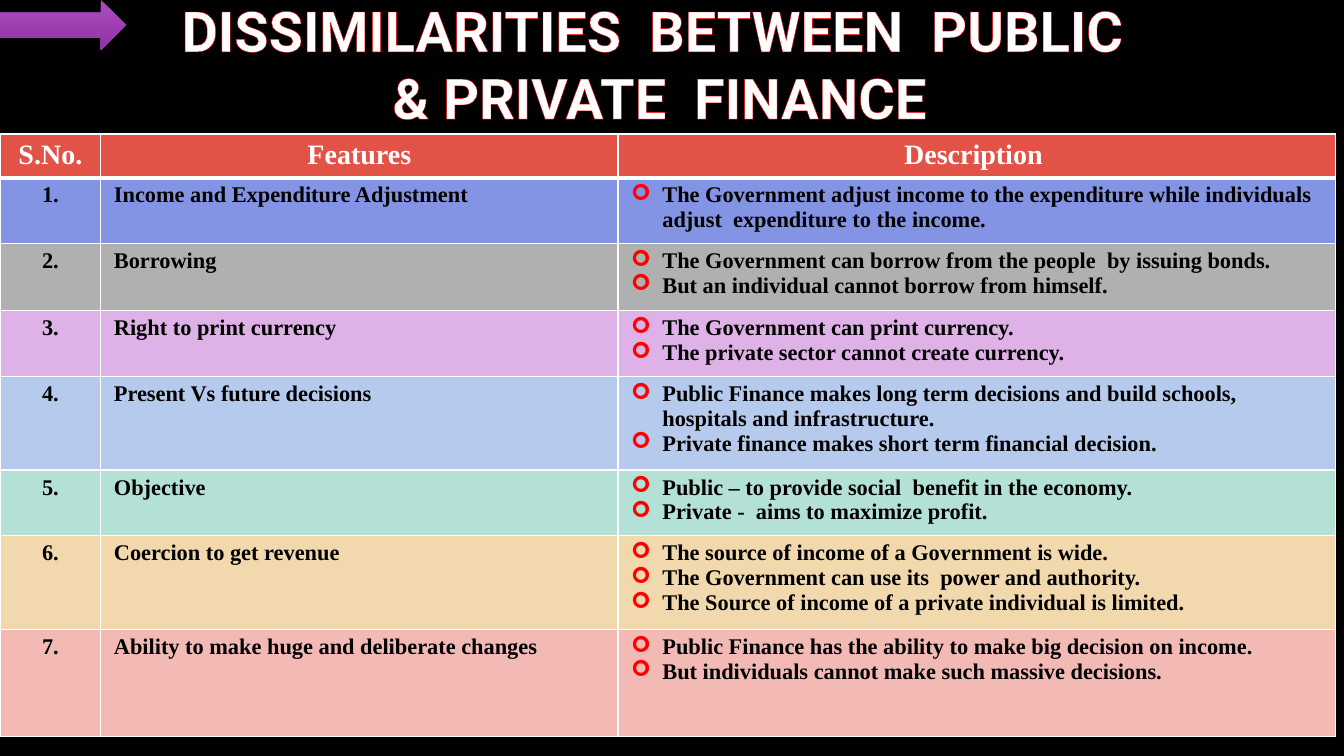
"""Build a slide with a table of differences between public and private finance."""
from pptx import Presentation, util as u
from pptx.dml.color import RGBColor
from pptx.enum import shapes, text
from pptx.oxml import parse_xml
from pptx.oxml.ns import nsdecls

WIDE, HIGH = u.Inches(13.33), u.Inches(7.5)
SERIF = "Times New Roman"
WHITE, BLACK, RED = "FFFFFF", "000000", "FF0000"
COLS = [1, 5.13, 7.12]
HEAD = ["S.No.", "Features", "Description "]
ROWS = [
    (0.65, "8394E4", "Income and Expenditure Adjustment", [
        "The Government adjust income to the expenditure while individuals "
        "adjust  expenditure to the income."]),
    (0.67, "B0B0B0", "Borrowing", [
        "The Government can borrow from the people  by issuing bonds.",
        "But an individual cannot borrow from himself."]),
    (0.65, "DEB2E6", "Right to print currency", [
        "The Government can print currency.",
        "The private sector cannot create currency."]),
    (0.93, "B5CAED", "Present Vs future decisions", [
        "Public Finance makes long term decisions and build schools, "
        "hospitals and infrastructure.",
        "Private finance makes short term financial decision."]),
    (0.65, "B4E1D6", "Objective", [
        "Public – to provide social  benefit in the economy.",
        "Private -  aims to maximize profit."]),
    (0.93, "F1D8AD", "Coercion to get revenue", [
        "The source of income of a Government is wide.",
        "The Government can use its  power and authority.",
        "The Source of income of a private individual is limited."]),
    (1.06, "F3BAB5", "Ability to make huge and deliberate changes", [
        "Public Finance has the ability to make big decision on income.",
        "But individuals cannot make such massive decisions."]),
]


def paint(color, code):
    """Set a colour from a hex string."""
    color.rgb = RGBColor.from_string(code)


def flood(fill, code):
    """Fill with one solid colour."""
    fill.solid()
    paint(fill.fore_color, code)


def node(tag, attrs="", body=""):
    """Make a drawing element."""
    return parse_xml(f"<a:{tag} {nsdecls('a')} {attrs}>{body}</a:{tag}>")


def solid(code, more=""):
    """Give the markup of a solid fill."""
    return f'<a:solidFill><a:srgbClr val="{code}"/></a:solidFill>{more}'


def style(para, face, size, code, align=None):
    """Set the bold font and the alignment of a paragraph."""
    para.font.name, para.font.size, para.font.bold = face, u.Pt(size), True
    paint(para.font.color, code)
    para.alignment = align


def bullet(para):
    """Give a paragraph a red arrow bullet and a hanging indent."""
    props = para._p.get_or_add_pPr()
    indent = u.Inches(0.31)
    props.set("marL", str(indent))
    props.set("indent", str(-indent))
    props.append(node("buClr", body=f'<a:srgbClr val="{RED}"/>'))
    props.append(node("buFont", 'typeface="Wingdings"'))
    props.append(node("buChar", 'char="➢"'))


def write(cell, lines, code, size=16, ink=BLACK, align=None, marks=False, base=1):
    """Fill a cell with colour, borders and text."""
    cell.margin_left = cell.margin_right = u.Inches(0.13)
    cell.margin_top = cell.margin_bottom = u.Inches(0.05)
    props = cell._tc.get_or_add_tcPr()
    for side, width in zip("LRTB", (1, 1, 1, base)):
        props.append(node(f"ln{side}", f'w="{u.Pt(width)}"', solid(WHITE)))
    flood(cell.fill, code)
    frame = cell.text_frame
    for i, line in enumerate(lines):
        para = frame.add_paragraph() if i else frame.paragraphs[0]
        para.text = line
        if marks:
            bullet(para)
        style(para, SERIF, size, ink, align)


def title(slide):
    """Add the outlined heading."""
    box = slide.shapes.add_textbox(u.Inches(1), u.Inches(-0.17), u.Inches(11.08), u.Inches(1.59))
    frame = box.text_frame
    frame.word_wrap = True
    frame.vertical_anchor = text.MSO_ANCHOR.MIDDLE
    para = frame.paragraphs[0]
    para.text = "DISSIMILARITIES  BETWEEN  PUBLIC \v& PRIVATE  FINANCE"
    style(para, "Roboto", 40, WHITE, text.PP_ALIGN.CENTER)
    for run in para.runs:
        edge = node("ln", f'w="{u.Pt(0.25)}"', solid(RED))
        run._r.get_or_add_rPr().insert(0, edge)


def grid(slide):
    """Add the table of features."""
    tall = [0.38] + [row[0] for row in ROWS]
    frame = slide.shapes.add_table(len(tall), len(COLS), 0, u.Inches(1.33),
                                   u.Inches(sum(COLS)), u.Inches(sum(tall)))
    table = frame.table
    for col, width in zip(table.columns, COLS):
        col.width = u.Inches(width)
    for row, height in zip(table.rows, tall):
        row.height = u.Inches(height)
    mid = text.PP_ALIGN.CENTER
    for i, name in enumerate(HEAD):
        write(table.cell(0, i), [name], "E25247", 20, WHITE, mid, base=3)
    for i, (_, code, name, lines) in enumerate(ROWS, 1):
        write(table.cell(i, 0), [f"{i}."], code, align=mid)
        write(table.cell(i, 1), [name], code)
        write(table.cell(i, 2), lines, code, marks=True)


def arrow(slide):
    """Add the shaded arrow in the top left corner."""
    shape = slide.shapes.add_shape(shapes.MSO_SHAPE.RIGHT_ARROW, 0, 0, u.Inches(1.25), u.Inches(0.5))
    shape.line.fill.background()
    shape.fill.gradient()
    shape.fill.gradient_angle = 270
    for stop, place, code in zip(shape.fill.gradient_stops, (0, 1), ("AE4AC2", "8F34A1")):
        stop.position = place
        paint(stop.color, code)
    shape.shadow.inherit = False
    shade = node("outerShdw", f'blurRad="{u.Pt(5)}" dist="{u.Pt(3)}" dir="5400000" rotWithShape="0"',
                 f'<a:srgbClr val="{BLACK}"><a:alpha val="65000"/></a:srgbClr>')
    shape._element.spPr.find(node("effectLst").tag).append(shade)


def main():
    """Build and save the slide."""
    deck = Presentation()
    deck.slide_width, deck.slide_height = WIDE, HIGH
    slide = deck.slides.add_slide(deck.slide_layouts[6])
    flood(slide.background.fill, BLACK)
    title(slide)
    grid(slide)
    arrow(slide)
    deck.save("out.pptx")


if __name__ == "__main__":
    main()
